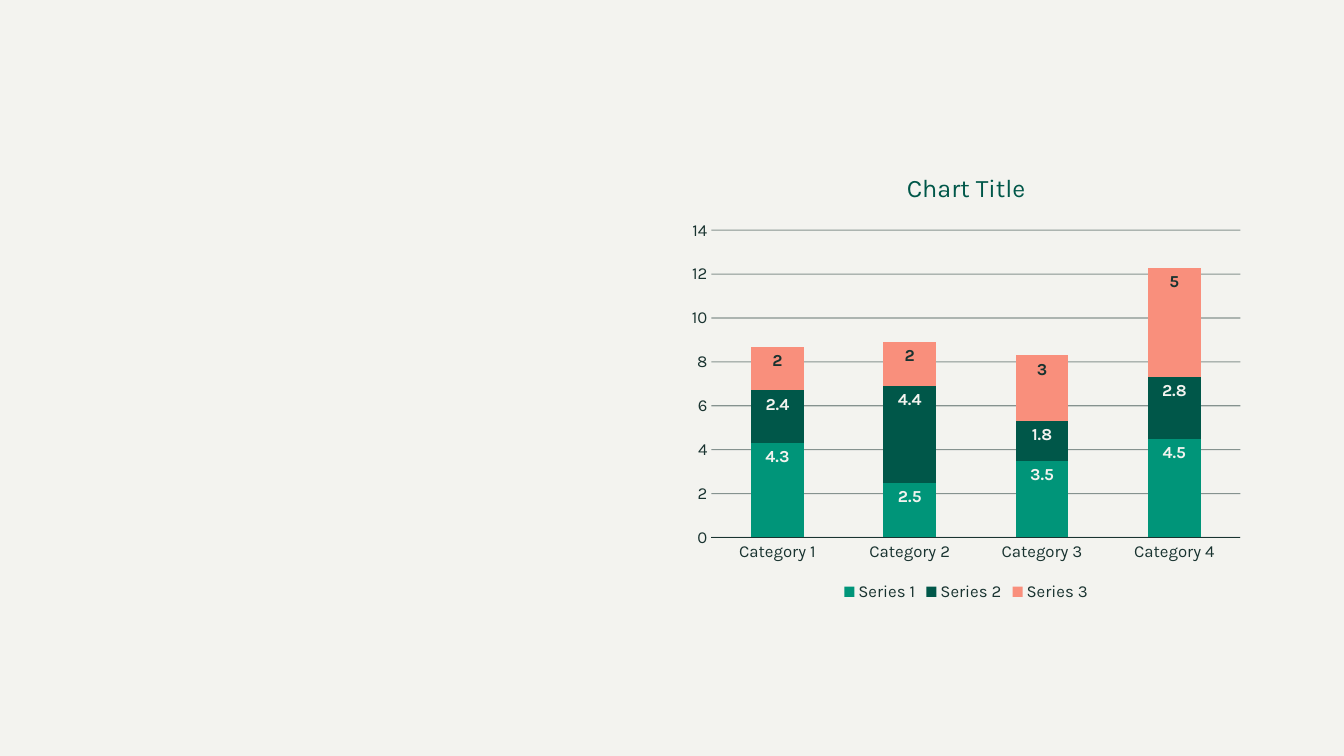
from dataclasses import dataclass

from lxml.etree import SubElement
from pptx import Presentation
from pptx.chart.data import CategoryChartData
from pptx.dml.color import RGBColor
from pptx.enum.chart import (XL_CHART_TYPE, XL_LABEL_POSITION,
                             XL_LEGEND_POSITION, XL_TICK_MARK)
from pptx.oxml import parse_xml
from pptx.oxml.ns import nsdecls, qn
from pptx.util import Pt


@dataclass(frozen=True)
class Theme:
    background: str = "F3F3EF"
    ink: str = "193330"
    green: str = "009579"
    dark_green: str = "005749"
    coral: str = "F98F7C"
    typeface: str = "Karla"
    base_size: int = 10
    label_size: int = 12
    title_size: int = 18
    line_width: float = 0.75


def set_alpha(color_element, percent):
    SubElement(color_element, qn("a:alpha"), val=str(percent * 1000))


class SlideBuilder:
    def __init__(self, slide, theme):
        self.slide = slide
        self.theme = theme

    def format_font(self, font, color, size, bold=False):
        values = {"name": self.theme.typeface, "size": Pt(size), "bold": bold}
        for name, value in values.items():
            setattr(font, name, value)
        font.color.rgb = RGBColor.from_string(color)

    def format_line(self, line):
        line.color.rgb = RGBColor.from_string(self.theme.ink)
        line.width = Pt(self.theme.line_width)

    def background(self):
        fill = self.slide.background.fill
        fill.solid()
        fill.fore_color.rgb = RGBColor.from_string(self.theme.background)

    def stacked_columns(self, box, title, categories, series_rows):
        data = CategoryChartData(number_format="General")
        data.categories = categories
        for name, values, _, _ in series_rows:
            data.add_series(name, values)
        chart = self.slide.shapes.add_chart(
            XL_CHART_TYPE.COLUMN_STACKED, *map(Pt, box), data).chart
        self.format_font(chart.font, self.theme.dark_green, self.theme.base_size)
        self.chart_title(chart, title)
        self.chart_legend(chart)
        self.chart_axes(chart)
        self.chart_area(chart)
        plot = chart.plots[0]
        for name, value in {"gap_width": 150, "overlap": 100,
                            "vary_by_categories": False}.items():
            setattr(plot, name, value)
        for series, (_, _, color, label_color) in zip(plot.series, series_rows):
            self.chart_series(series, color, label_color)

    def chart_title(self, chart, title):
        chart.has_title = True
        chart.chart_title.include_in_layout = False
        paragraph = chart.chart_title.text_frame.paragraphs[0]
        run = paragraph.add_run()
        run.text = title
        self.format_font(run.font, self.theme.dark_green, self.theme.title_size)

    def chart_legend(self, chart):
        chart.has_legend = True
        chart.legend.position = XL_LEGEND_POSITION.BOTTOM
        chart.legend.include_in_layout = False
        self.format_font(chart.legend.font, self.theme.ink, self.theme.label_size)

    def chart_axes(self, chart):
        for axis in (chart.category_axis, chart.value_axis):
            axis.major_tick_mark = XL_TICK_MARK.NONE
            axis.minor_tick_mark = XL_TICK_MARK.NONE
            self.format_font(axis.tick_labels.font, self.theme.ink,
                             self.theme.label_size)
        self.format_line(chart.category_axis.format.line)
        value_axis = chart.value_axis
        value_axis.format.line.fill.background()
        value_axis.has_major_gridlines = True
        self.format_line(value_axis.major_gridlines.format.line)
        for color in chart.element.xpath("//c:majorGridlines//a:srgbClr"):
            set_alpha(color, 50)

    def chart_area(self, chart):
        """Give the chart area a translucent fill and no outline."""
        area = parse_xml(
            f'<c:spPr {nsdecls("c", "a")}><a:solidFill>'
            f'<a:srgbClr val="{self.theme.background}"/></a:solidFill>'
            '<a:ln><a:noFill/></a:ln></c:spPr>')
        set_alpha(area.find(".//" + qn("a:srgbClr")), 75)
        chart.element.find(qn("c:chart")).addnext(area)

    def chart_series(self, series, color, label_color):
        series.format.fill.solid()
        series.format.fill.fore_color.rgb = RGBColor.from_string(color)
        labels = series.data_labels
        labels.show_value = True
        labels.position = XL_LABEL_POSITION.INSIDE_END
        self.format_font(labels.font, label_color, self.theme.label_size, bold=True)


def main():
    theme = Theme()
    presentation = Presentation()
    presentation.slide_width, presentation.slide_height = Pt(960), Pt(540)
    slide = presentation.slides.add_slide(presentation.slide_layouts[6])
    builder = SlideBuilder(slide, theme)
    builder.background()
    builder.stacked_columns(
        (486, 108.72, 408.24, 324), "Chart Title",
        [f"Category {number}" for number in range(1, 5)],
        [("Series 1", (4.3, 2.5, 3.5, 4.5), theme.green, theme.background),
         ("Series 2", (2.4, 4.4, 1.8, 2.8), theme.dark_green, theme.background),
         ("Series 3", (2, 2, 3, 5), theme.coral, theme.ink)])
    presentation.save("out.pptx")


if __name__ == "__main__":
    main()
